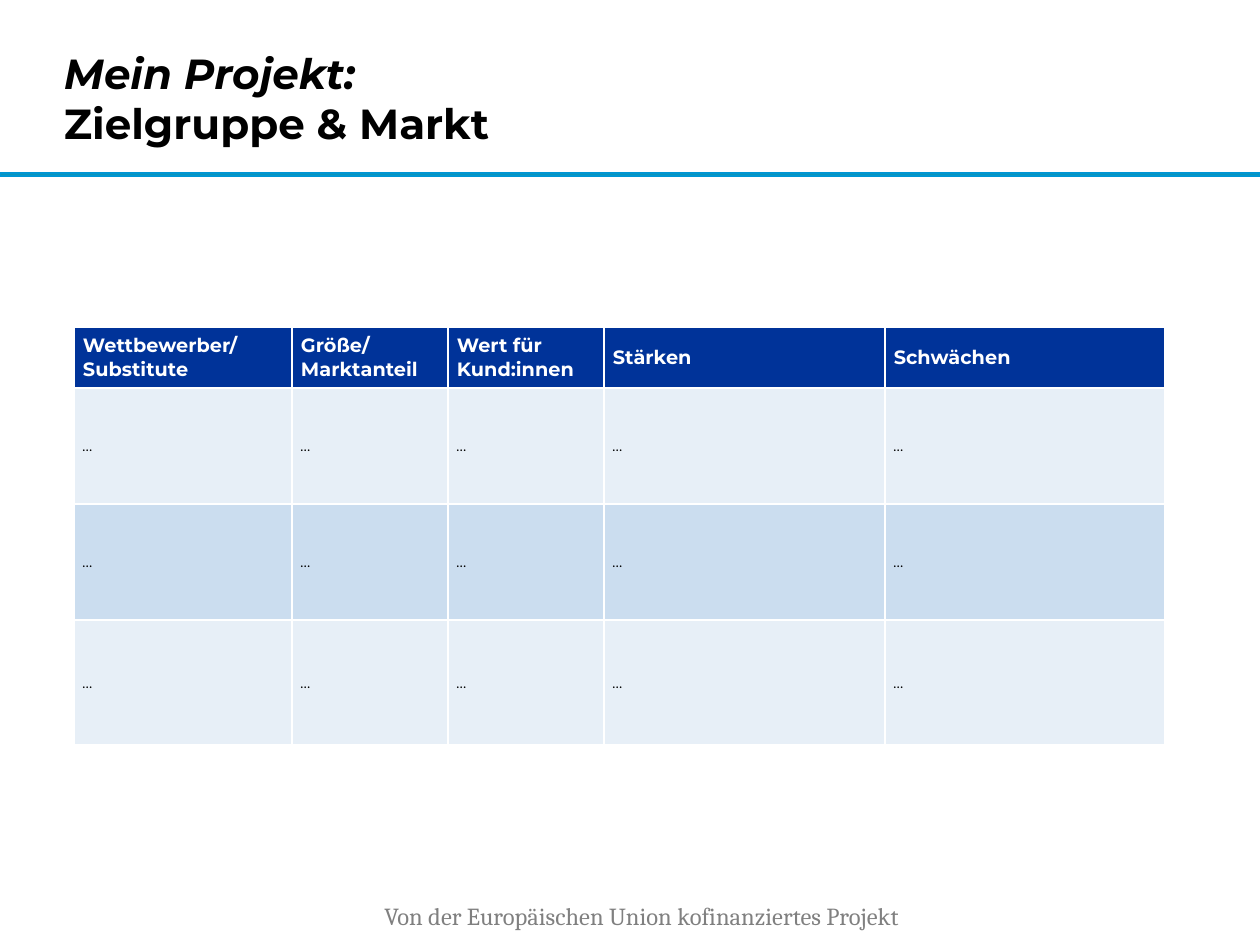
from dataclasses import dataclass

from lxml import etree
from pptx import Presentation
from pptx.dml.color import RGBColor
from pptx.enum.shapes import MSO_SHAPE
from pptx.enum.text import MSO_ANCHOR
from pptx.oxml.ns import qn
from pptx.util import Emu, Pt

RECT = MSO_SHAPE.RECTANGLE
MIDDLE = MSO_ANCHOR.MIDDLE
TOP = MSO_ANCHOR.TOP
BLANK = 6
EMU_PER_PX = 914400 // 126


@dataclass(frozen=True)
class Theme:
    font: str = "Montserrat"
    footer_font: str = "Cambria"
    black: str = "000000"
    white: str = "FFFFFF"
    grey: str = "808080"
    rule_fill: str = "0C94B7"
    rule_line: str = "0096D3"
    header: str = "003399"
    bands: tuple = ("E7EFF7", "CBDDEF")
    title_size: int = 24
    footer_size: int = 14
    header_size: int = 11
    body_size: int = 9


THEME = Theme()

COLUMNS = [218, 156, 156, 281, 280]
ROWS = [61, 116, 116, 125]
HEADERS = [
    ["Wettbewerber/", "Substitute"],
    ["Größe/", "Marktanteil"],
    ["Wert für Kund:innen"],
    ["Stärken"],
    ["Schwächen"],
]
BODY = [[["…"]] * len(COLUMNS)] * (len(ROWS) - 1)


def px(n):
    return Emu(n * EMU_PER_PX)


def rgb(value):
    return RGBColor.from_string(value)


def style(p, font, size, color, bold=False, italic=False):
    f = p.font
    f.name, f.size, f.bold, f.italic = font, Pt(size), bold, italic
    f.color.rgb = rgb(color)


def add_text_frame(s, x, y, w, h, anchor=TOP):
    tf = s.shapes.add_textbox(px(x), px(y), px(w), px(h)).text_frame
    tf.word_wrap = True
    tf.vertical_anchor = anchor
    return tf


def add_title(s, lead, topic):
    tf = add_text_frame(s, 64, 23, 916, 150, MIDDLE)
    tf.margin_left = tf.margin_right = tf.margin_top = tf.margin_bottom = 0
    p = tf.paragraphs[0]
    r = p.add_run()
    r.text = lead
    r.font.italic = True
    p.add_line_break()
    p.add_run().text = topic
    style(p, THEME.font, THEME.title_size, THEME.black, bold=True)


def add_rule(s):
    sp = s.shapes.add_shape(RECT, 0, px(173), px(1260), px(3))
    sp.shadow.inherit = False
    sp.fill.solid()
    sp.fill.fore_color.rgb = rgb(THEME.rule_fill)
    sp.line.color.rgb = rgb(THEME.rule_line)
    sp.line.width = Pt(1)


def add_footer(s, text):
    p = add_text_frame(s, 372, 895, 587, 43).paragraphs[0]
    p.text = text
    style(p, THEME.footer_font, THEME.footer_size, THEME.grey)


def add_borders(cell):
    # Border lines come before the fill in the cell properties
    tc_pr = cell._tc.get_or_add_tcPr()
    for i, side in enumerate(("lnL", "lnR", "lnT", "lnB")):
        ln = etree.Element(qn(f"a:{side}"), w=str(Pt(1)))
        fill = etree.SubElement(ln, qn("a:solidFill"))
        etree.SubElement(fill, qn("a:srgbClr"), val=THEME.white)
        tc_pr.insert(i, ln)


def fill_cell(cell, lines, fill, **font):
    cell.fill.solid()
    cell.fill.fore_color.rgb = rgb(fill)
    cell.vertical_anchor = MIDDLE
    cell.margin_left = cell.margin_right = px(9)
    cell.margin_top = cell.margin_bottom = 0
    cell.text_frame.text = "\n".join(lines)
    for p in cell.text_frame.paragraphs:
        style(p, THEME.font, **font)
    add_borders(cell)


def add_competitor_table(s):
    table = s.shapes.add_table(len(ROWS), len(COLUMNS), px(74), px(327),
                               px(sum(COLUMNS)), px(sum(ROWS))).table
    for column, width in zip(table.columns, COLUMNS):
        column.width = px(width)
    for row, height in zip(table.rows, ROWS):
        row.height = px(height)

    header_font = dict(size=THEME.header_size, color=THEME.white, bold=True)
    body_font = dict(size=THEME.body_size, color=THEME.black, italic=True)
    for i, texts in enumerate([HEADERS] + BODY):
        fill = THEME.bands[(i - 1) % 2] if i else THEME.header
        font = body_font if i else header_font
        for j, lines in enumerate(texts):
            fill_cell(table.cell(i, j), lines, fill, **font)


def main():
    prs = Presentation()
    prs.slide_width, prs.slide_height = px(1260), px(945)
    s = prs.slides.add_slide(prs.slide_layouts[BLANK])

    # Frame of the slide
    add_rule(s)
    add_footer(s, "Von der Europäischen Union kofinanziertes Projekt")

    # Content
    add_title(s, "Mein Projekt:", "Zielgruppe & Markt")
    add_competitor_table(s)

    prs.save("out.pptx")


if __name__ == "__main__":
    main()
